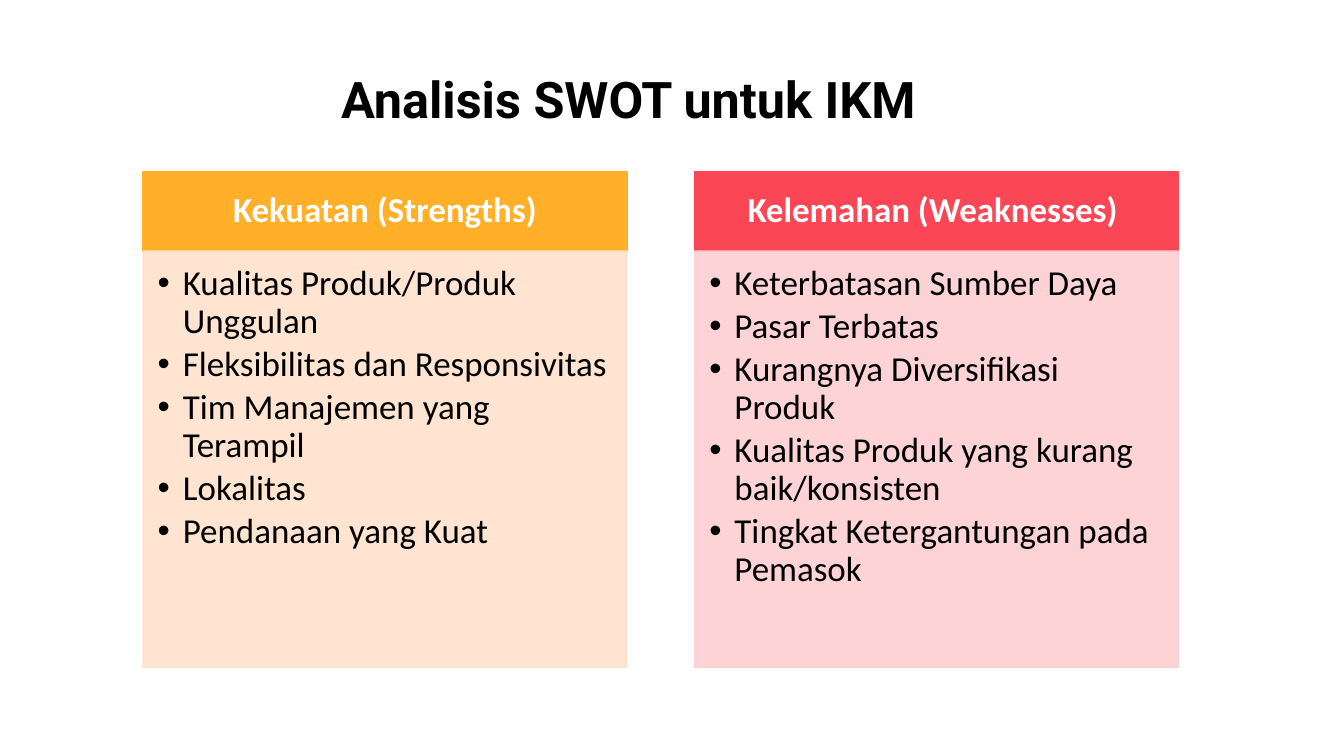
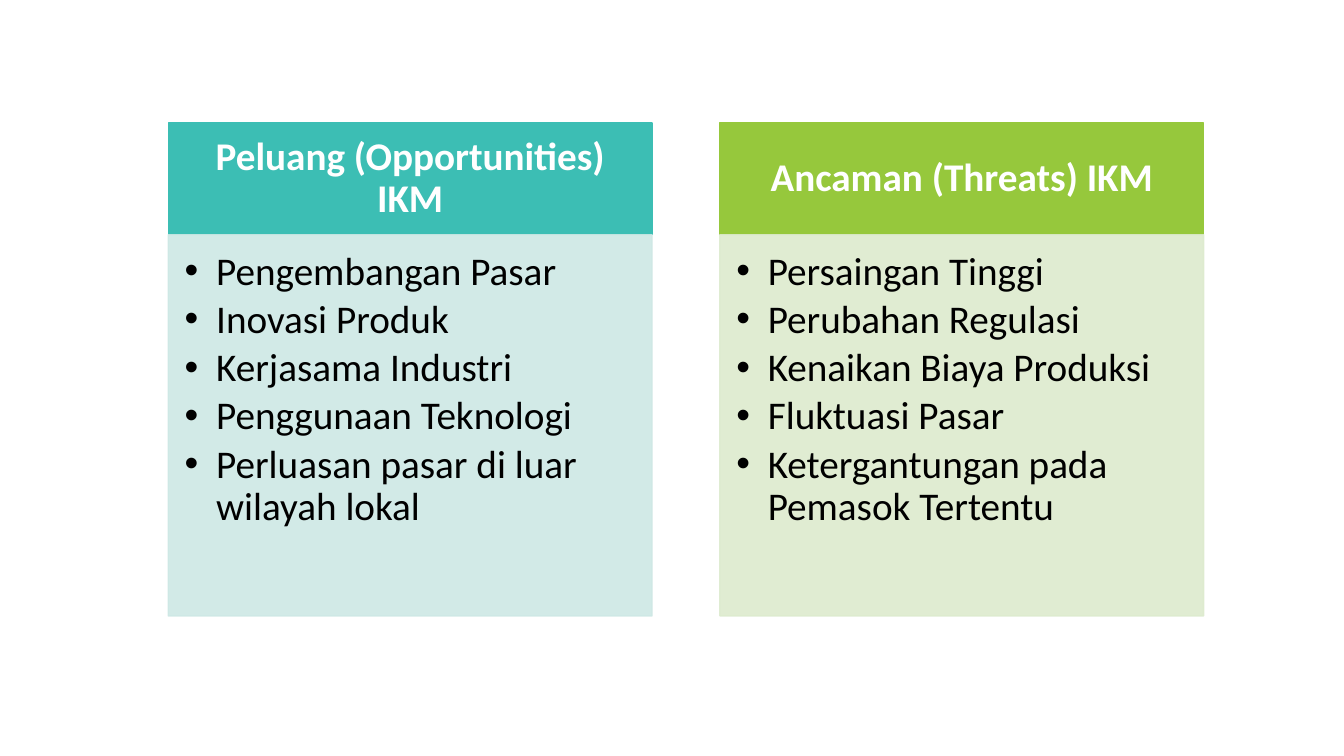
from lxml.etree import SubElement
from pptx import Presentation
from pptx.dml.color import RGBColor
from pptx.enum.shapes import MSO_SHAPE as Shape
from pptx.enum.text import MSO_ANCHOR as Anchor, MSO_AUTO_SIZE as AutoSize, PP_ALIGN as Align
from pptx.oxml.ns import qn
from pptx.util import Pt

COLORS = {
    "black": "000000", "white": "FFFFFF",
    "orange": "FFAF28", "orange_tint": "FFE3CD",
    "red": "FA4655", "red_tint": "FDCFD1",
    "teal": "3CBEB4", "teal_tint": "CEE8E5",
    "green": "96C83C", "green_tint": "DDEBCE",
}
COLUMN_WIDTH = 345.6
COLUMN_PITCH = 1.14 * COLUMN_WIDTH
BODY_OPACITY = 90


class Deck:
    """Holds the shared style and the current slide."""

    title_font, text_font = "Roboto", "Calibri"

    def __init__(self):
        self.presentation = Presentation()
        self.presentation.slide_width = Pt(960)
        self.presentation.slide_height = Pt(540)
        self.slide = None

    def add_slide(self):
        self.slide = self.presentation.slides.add_slide(self.presentation.slide_layouts[6])

    def add_run(self, paragraph, text, size, color, bold=False, font=text_font):
        run = paragraph.add_run()
        run.text = text
        run.font.name, run.font.size, run.font.bold = font, Pt(size), bold
        run.font.color.rgb = RGBColor.from_string(COLORS[color])

    def add_title(self, text):
        frame = self.slide.shapes.add_textbox(Pt(208.8), Pt(45.4), Pt(480.2), Pt(51.1)).text_frame
        frame.word_wrap = True
        frame.auto_size = AutoSize.SHAPE_TO_FIT_TEXT
        paragraph = frame.paragraphs[0]
        paragraph.alignment = Align.CENTER
        self.add_run(paragraph, text, 36, "black", bold=True, font=self.title_font)

    def add_panel(self, left, top, height, color, insets, anchor, opacity=100):
        """Draw a filled rectangle and return its text frame."""
        shape = self.slide.shapes.add_shape(
            Shape.RECTANGLE, Pt(left), Pt(top), Pt(COLUMN_WIDTH), Pt(height))
        shape.shadow.inherit = False
        shape.line.width = Pt(1)
        for fill in (shape.fill, shape.line.fill):
            fill.solid()
            fill.fore_color.rgb = RGBColor.from_string(COLORS[color])
        if opacity < 100:
            for tint in shape._element.spPr.iter(qn("a:srgbClr")):
                SubElement(tint, qn("a:alpha"), val=str(opacity * 1000))
        frame = shape.text_frame
        frame.word_wrap = True
        frame.vertical_anchor = anchor
        (frame.margin_left, frame.margin_top,
         frame.margin_right, frame.margin_bottom) = [Pt(inset) for inset in insets]
        return frame

    def add_header(self, left, top, height, color, text, size):
        side, edge = 0.56 * size, 0.32 * size
        frame = self.add_panel(left, top, height, color, (side, edge, side, edge), Anchor.MIDDLE)
        paragraph = frame.paragraphs[0]
        paragraph.alignment = Align.CENTER
        paragraph.line_spacing = 0.9
        self.add_run(paragraph, text, size, "white", bold=True)

    def add_bullets(self, left, top, height, color, items, size, indent):
        insets = [factor * size for factor in (0.42, 0.42, 0.56, 0.63)]
        frame = self.add_panel(left, top, height, color, insets, Anchor.TOP, BODY_OPACITY)
        for index, item in enumerate(items):
            paragraph = frame.add_paragraph() if index else frame.paragraphs[0]
            paragraph.alignment = Align.LEFT
            paragraph.line_spacing = 0.9
            paragraph.space_after = Pt(0.15 * size)
            properties = paragraph._p.get_or_add_pPr()
            properties.set("marL", str(Pt(indent)))
            properties.set("indent", str(-Pt(indent)))
            SubElement(properties, qn("a:buFont"), typeface="Arial")
            SubElement(properties, qn("a:buChar"), char="•")
            self.add_run(paragraph, item, size, "black")

    def add_columns(self, left, top, header_height, body_height, size, indent, columns):
        for index, (color, heading, items) in enumerate(columns):
            x = left + index * COLUMN_PITCH
            self.add_header(x, top, header_height, color, heading, size)
            self.add_bullets(x, top + header_height, body_height, color + "_tint",
                             items, size, indent)


def main():
    deck = Deck()

    # Strengths and weaknesses
    deck.add_slide()
    deck.add_title("Analisis SWOT untuk IKM")
    deck.add_columns(102.2, 122.4, 56.9, 297.4, size=25, indent=18, columns=[
        ("orange", "Kekuatan (Strengths)", [
            "Kualitas Produk/Produk Unggulan",
            "Fleksibilitas dan Responsivitas",
            "Tim Manajemen yang Terampil",
            "Lokalitas",
            "Pendanaan yang Kuat",
        ]),
        ("red", "Kelemahan (Weaknesses) ", [
            "Keterbatasan Sumber Daya",
            "Pasar Terbatas",
            "Kurangnya Diversifikasi Produk",
            "Kualitas Produk yang kurang baik/konsisten",
            "Tingkat Ketergantungan pada Pemasok",
        ]),
    ])

    # Opportunities and threats
    deck.add_slide()
    deck.add_columns(120.2, 87.8, 79.9, 272.2, size=28, indent=22.5, columns=[
        ("teal", "Peluang (Opportunities) IKM", [
            "Pengembangan Pasar",
            "Inovasi Produk",
            "Kerjasama Industri",
            "Penggunaan Teknologi",
            "Perluasan pasar di luar wilayah lokal",
        ]),
        ("green", "Ancaman (Threats) IKM", [
            "Persaingan Tinggi",
            "Perubahan Regulasi",
            "Kenaikan Biaya Produksi",
            "Fluktuasi Pasar",
            "Ketergantungan pada Pemasok Tertentu",
        ]),
    ])

    deck.presentation.save("out.pptx")


if __name__ == "__main__":
    main()
